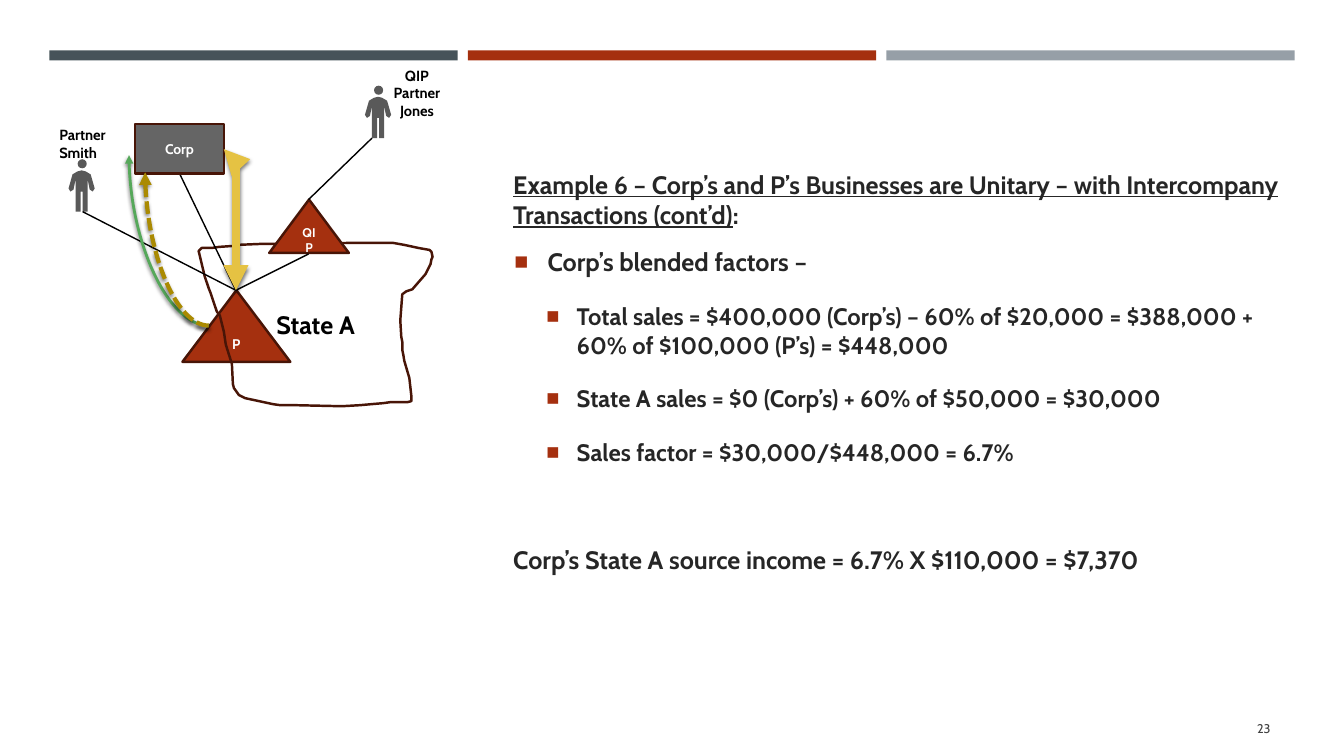
from lxml import etree
from pptx import Presentation
from pptx import util as u
from pptx.dml.color import RGBColor
from pptx.enum import dml, shapes, text
from pptx.oxml.ns import qn

FONT = "Cabin"
RED, MAROON, BLACK, WHITE = "A5300F", "481507", "000000", "FFFFFF"
CENTER = text.PP_ALIGN.CENTER


def color(value):
    return RGBColor.from_string(value)


def add_xml(parent, tag, **attributes):
    return etree.SubElement(parent, qn(tag), attributes)


def write(paragraph, words, size=18, ink=BLACK, bold=True, underline=False, align=None):
    """Add one formatted run to a paragraph."""
    if align is not None:
        paragraph.alignment = align
    run = paragraph.add_run()
    run.text = words
    font = run.font
    font.name, font.size, font.bold, font.underline = FONT, u.Pt(size), bold, underline
    font.color.rgb = color(ink)


class Diagram:
    """Holds the slide, the shape tree being drawn on, and the drawing style."""

    def __init__(self, slide):
        self.slide = slide
        self.canvas = slide.shapes

    def style(self, item, fill=None, edge=None):
        item.shadow.inherit = False
        if fill:
            item.fill.solid()
            item.fill.fore_color.rgb = color(fill)
        else:
            item.fill.background()
        if edge:
            item.line.color.rgb = color(edge)
            item.line.width = u.Pt(1.75)
        else:
            item.line.fill.background()

    def caption(self, item, words, **form):
        frame = item.text_frame
        frame.word_wrap = True
        frame.vertical_anchor = text.MSO_ANCHOR.MIDDLE
        write(frame.paragraphs[0], words, align=CENTER, **form)

    def shape(self, kind, box, fill, edge=None, words=None, **form):
        item = self.canvas.add_shape(kind, *map(u.Inches, box))
        self.style(item, fill, edge)
        if words:
            self.caption(item, words, **form)

    def outline(self, points, fill=None, edge=None):
        """Closed outline; points are in hundredths of an inch."""
        builder = self.canvas.build_freeform(*points[0], scale=u.Inches(0.01))
        builder.add_line_segments(points[1:], close=True)
        item = builder.convert_to_shape()
        self.style(item, fill, edge)
        return item

    def label(self, box, words, anchor=text.MSO_ANCHOR.TOP, **form):
        frame = self.canvas.add_textbox(*map(u.Inches, box)).text_frame
        frame.word_wrap = True
        frame.vertical_anchor = anchor
        write(frame.paragraphs[0], words, **form)

    def person(self, left, top):
        grey = "595959"
        self.shape(shapes.MSO_SHAPE.OVAL, (left + 0.09, top, 0.09, 0.09), grey)
        x, y = round(left * 100), round(top * 100)
        # Right half of the body, mirrored about the middle
        half = [(13, 11), (17, 12), (22, 15), (26, 29), (24, 32), (21, 30),
                (19, 20), (19, 52), (14, 52), (14, 32)]
        body = half + [(26 - px, py) for px, py in reversed(half)]
        self.outline([(x + px, y + py) for px, py in body], grey)

    def line(self, start, end, ink=BLACK, width=1, kind=shapes.MSO_CONNECTOR.STRAIGHT,
             preset="line", dash=None, arrows=(), shadow=False):
        link = self.canvas.add_connector(kind, *map(u.Inches, start + end))
        link.line.color.rgb = color(ink)
        link.line.width = u.Pt(width)
        if dash:
            link.line.dash_style = dash
        properties = link.element.spPr
        properties.find(qn("a:prstGeom")).set("prst", preset)
        for tip in arrows:
            add_xml(properties.find(qn("a:ln")), tip, type="triangle")
        effects = add_xml(properties, "a:effectLst")
        if shadow:
            cast = add_xml(effects, "a:outerShdw", blurRad=str(u.Pt(3)), dist=str(u.Pt(2)),
                           dir="5400000", algn="ctr", rotWithShape="0")
            add_xml(add_xml(cast, "a:srgbClr", val=BLACK), "a:alpha", val="55000")

    def item(self, paragraph, level, left, hang=0.0, before=6, after=12):
        """Set level, indent, spacing and bullet of a body paragraph."""
        paragraph.level = level
        paragraph.space_before, paragraph.space_after = u.Pt(before), u.Pt(after)
        paragraph.line_spacing = 1.0
        properties = paragraph._p.get_or_add_pPr()
        properties.set("marL", str(u.Inches(left)))
        properties.set("indent", str(u.Inches(-hang)))
        if hang:
            add_xml(add_xml(properties, "a:buClr"), "a:srgbClr", val=RED)
            add_xml(properties, "a:buSzPct", val="92000")
            add_xml(properties, "a:buFont", typeface="Arial")
            add_xml(properties, "a:buChar", char="■")
        else:
            add_xml(properties, "a:buNone")

    def body(self, box, rows):
        holder = self.slide.placeholders[1]
        holder.left, holder.top, holder.width, holder.height = map(u.Inches, box)
        frame = holder.text_frame
        frame.auto_size = text.MSO_AUTO_SIZE.NONE
        frame.word_wrap = True
        frame.vertical_anchor = text.MSO_ANCHOR.MIDDLE
        frame.margin_bottom = u.Inches(0.48)
        for number, (runs, size, layout) in enumerate(rows):
            paragraph = frame.add_paragraph() if number else frame.paragraphs[0]
            self.item(paragraph, **layout)
            for words, underline in runs:
                write(paragraph, words, size=size, ink="262626", underline=underline)


STATE_BORDER = [
    (197, 249), (203, 274), (207, 286), (209, 291), (215, 309), (218, 313), (222, 329),
    (224, 342), (230, 361), (231, 381), (232, 385), (237, 392), (243, 395), (271, 401),
    (278, 402), (293, 402), (339, 403), (357, 402), (368, 401), (380, 400), (387, 399),
    (404, 399), (408, 398), (408, 393), (406, 375), (401, 358), (400, 352), (399, 347),
    (399, 339), (398, 334), (397, 318), (399, 292), (403, 289), (409, 287), (422, 272),
    (425, 266), (427, 262), (428, 257), (429, 255), (428, 250), (426, 248), (415, 246),
    (401, 243), (390, 241), (379, 241), (349, 241), (266, 242), (259, 242), (235, 243),
    (231, 244), (217, 245), (210, 246), (202, 246), (200, 246)]


def main():
    deck = Presentation()
    deck.slide_width, deck.slide_height = u.Inches(13.33), u.Inches(7.5)
    slide = deck.slides.add_slide(deck.slide_layouts[1])
    title = slide.shapes.title.element
    title.getparent().remove(title)
    page = Diagram(slide)
    box, triangle = shapes.MSO_SHAPE.RECTANGLE, shapes.MSO_SHAPE.ISOSCELES_TRIANGLE

    # Top bars and page number
    for column, fill in enumerate(("465359", RED, "969FA7")):
        page.shape(box, (0.49 + 4.15 * column, 0.5, 4.05, 0.1), fill)
    page.label((11.55, 7.03, 1.15, 0.4), "23", anchor=text.MSO_ANCHOR.MIDDLE, size=9,
               ink="404040", bold=False, align=text.PP_ALIGN.RIGHT)

    # Worked example
    bullet = dict(level=1, left=0.69, hang=0.33)
    sub_bullet = dict(level=2, left=0.98, hang=0.3)
    page.body((4.64, 0.79, 8.19, 6.23), [
        ([("Example 6 – Corp’s and P’s Businesses are Unitary – with Intercompany "
           "Transactions (cont’d)", True), (":", False)], 18,
         dict(level=1, left=0.35, before=0, after=6)),
        ([("Corp’s blended factors –", False)], 18, bullet),
        ([("Total sales = $400,000 (Corp’s) – 60% of $20,000 = $388,000 + "
           "60% of $100,000 (P’s) = $448,000", False)], 17, sub_bullet),
        ([("State A sales = $0 (Corp’s) + 60% of $50,000 = $30,000", False)], 17, sub_bullet),
        ([("Sales factor = $30,000/$448,000 = 6.7%", False)], 17, sub_bullet),
        ([("Corp’s State A source income = 6.7% X $110,000 = $7,370", False)], 18,
         dict(level=1, left=0.35, before=44, after=0)),
    ])

    # Ownership structure
    p_top, qip_top = (2.34, 2.88), (3.06, 1.98)
    page.canvas = slide.shapes.add_group_shape().shapes
    page.person(0.68, 1.58)
    page.shape(triangle, (1.81, 2.88, 1.07, 0.71), RED, MAROON, "P", size=10, ink=WHITE)
    page.caption(page.outline(STATE_BORDER, edge=MAROON), "State A")
    page.line((1.78, 1.72), p_top)
    page.line((0.82, 2.1), p_top)
    page.shape(box, (1.34, 1.23, 0.88, 0.49), "656565", MAROON, "Corp", size=10, ink=WHITE)
    page.shape(triangle, (2.67, 1.98, 0.79, 0.53), RED, MAROON, "QIP", size=9, ink=WHITE)
    page.person(3.62, 0.85)
    page.line((3.06, 2.52), p_top)
    page.line((3.69, 1.37), qip_top)
    page.label((0.49, 1.2, 0.79, 0.47), "Partner Smith", size=10.5)
    page.label((3.79, 0.61, 0.69, 0.63), "QIP Partner Jones", size=10.5, align=CENTER)

    # Flows between P and Corp
    page.canvas = slide.shapes
    curve = dict(kind=shapes.MSO_CONNECTOR.CURVE, preset="curvedConnector2",
                 arrows=["a:tailEnd"], shadow=True)
    page.line((2.07, 3.23), (1.28, 1.54), "56A85A", 2, **curve)
    page.line((2.07, 3.23), (1.44, 1.71), "AA8A02", 3,
              dash=dml.MSO_LINE.SQUARE_DOT, **curve)
    page.line((2.22, 1.48), p_top, "E5C243", 6, kind=shapes.MSO_CONNECTOR.ELBOW,
              preset="bentConnector2", arrows=["a:headEnd", "a:tailEnd"], shadow=True)

    deck.save("out.pptx")


if __name__ == "__main__":
    main()
